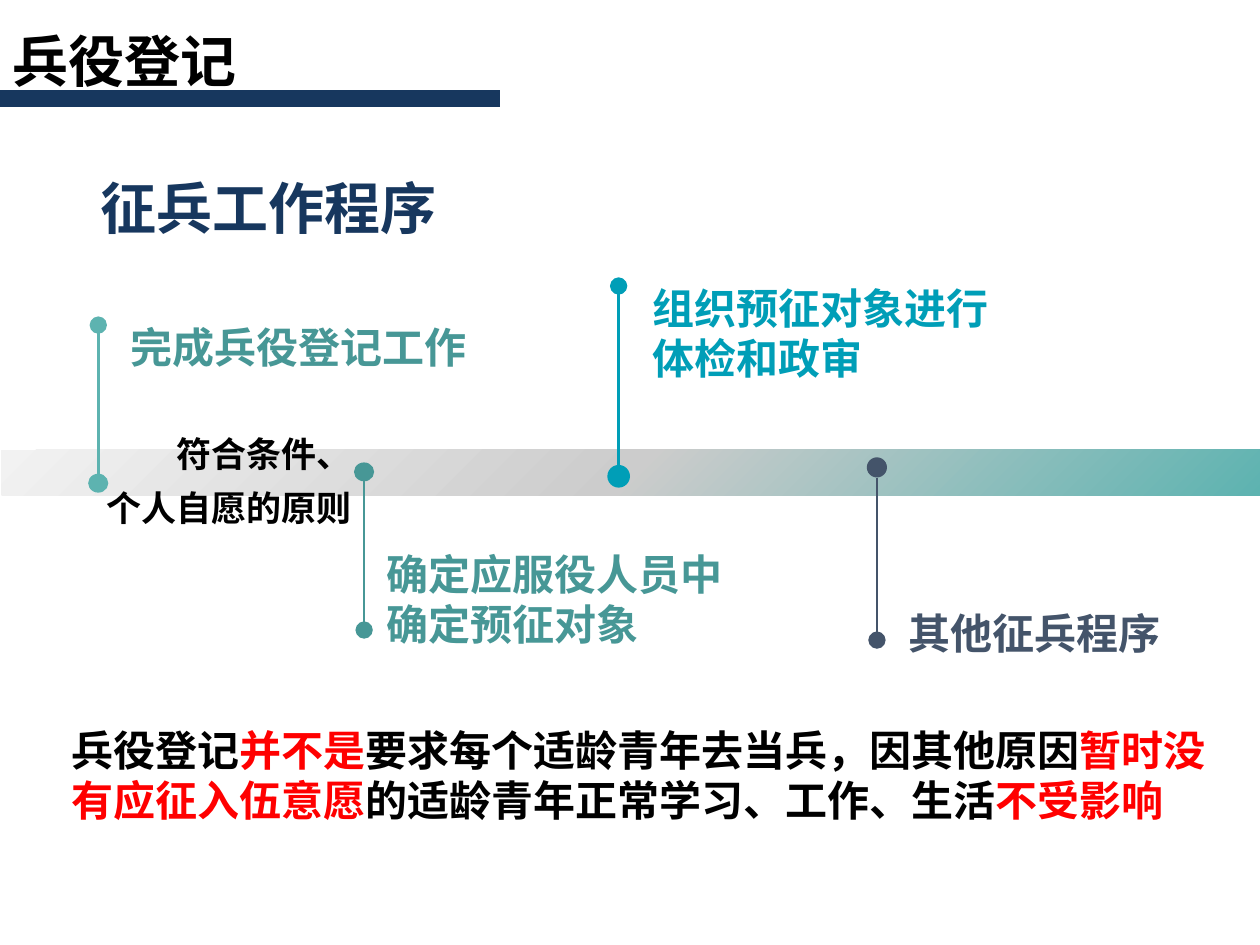
import functools
from collections import namedtuple
from dataclasses import dataclass

import pptx
import pptx.dml.color
import pptx.enum.shapes
import pptx.enum.text
import pptx.oxml
import pptx.oxml.ns
import pptx.util
from lxml import etree

COLUMNS, ROWS = 100, 75
SLIDE_WIDTH, SLIDE_HEIGHT = pptx.util.Inches(10), pptx.util.Inches(7.5)

Box = namedtuple("Box", "left top width height")
# The label box is measured from the pin's top.
Milestone = namedtuple("Milestone", "wording color pin dot_height rising label wrap")


@dataclass(frozen=True)
class Theme:
    navy: str = "17375E"
    mint: str = "5DB3B0"
    teal: str = "479796"
    cyan: str = "009EB7"
    slate: str = "44546A"
    black: str = "000000"
    red: str = "FF0000"
    silver: str = "CCCCCC"
    pale: str = "F2F2F2"
    heading_font: str = "Noto Sans CJK SC"
    text_font: str = "Quicksand"
    heading_size: int = 32
    label_size: int = 24
    note_size: int = 20
    rule_width: int = 10
    pin_width: float = 1.5


THEME = Theme()

MILESTONES = [
    Milestone("完成兵役登记工作", THEME.mint, Box(7, 25.8, 1.6, 13.3), 1.5, True,
              Box(2.4, -0.8, 28.9, 5), False),
    Milestone("确定应服役人员中确定预征对象", THEME.teal, Box(28.1, 36.7, 1.6, 13.3), 1.5, False,
              Box(1.6, 6.3, 30.7, 9.1), True),
    Milestone("组织预征对象进行体检和政审", THEME.cyan, Box(48.2, 22.7, 1.8, 16), 1.8, True,
              Box(2.6, -0.8, 31.2, 9.1), True),
    Milestone("其他征兵程序", THEME.slate, Box(68.8, 36.3, 1.6, 14.5), 1.6, False,
              Box(2.3, 11.4, 22.2, 10.4), False),
]

CLOSING = [
    ("兵役登记", THEME.black), ("并不是", THEME.red),
    ("要求每个适龄青年去当兵，因其他原因", THEME.black), ("暂时没有应征入伍意愿", THEME.red),
    ("的适龄青年正常学习、工作、生活", THEME.black), ("不受影响", THEME.red),
]


def col(count):
    return round(SLIDE_WIDTH * count / COLUMNS)


def row(count):
    return round(SLIDE_HEIGHT * count / ROWS)


def place(box):
    return col(box.left), row(box.top), col(box.width), row(box.height)


def rgb(value):
    return pptx.dml.color.RGBColor.from_string(value)


def apply(target, formats):
    for name, value in formats.items():
        setattr(target, name, value)


def write(shape, paragraphs, size, font=THEME.text_font, wrap=True, **formats):
    """Fill a shape with paragraphs, each a list of (wording, color) runs."""
    frame = shape.text_frame
    apply(frame, {"word_wrap": wrap, "vertical_anchor": pptx.enum.text.MSO_ANCHOR.TOP,
                  "auto_size": pptx.enum.text.MSO_AUTO_SIZE.SHAPE_TO_FIT_TEXT})
    for index, runs in enumerate(paragraphs):
        paragraph = frame.add_paragraph() if index else frame.paragraphs[0]
        apply(paragraph, {"alignment": pptx.enum.text.PP_ALIGN.LEFT,
                          "space_before": pptx.util.Pt(0), **formats})
        for wording, color in runs:
            run = paragraph.add_run()
            run.text = wording
            apply(run.font, {"name": font, "size": pptx.util.Pt(size), "bold": True})
            run.font.color.rgb = rgb(color)
            east_asian = etree.SubElement(run.font._element, pptx.oxml.ns.qn("a:ea"))
            east_asian.set("typeface", font)


def add_text(slide, box, *content, **formats):
    write(slide.shapes.add_textbox(*place(box)), *content, **formats)


def add_line(shapes, start, end, color, width):
    line = shapes.add_connector(pptx.enum.shapes.MSO_CONNECTOR.STRAIGHT,
                                col(start[0]), row(start[1]), col(end[0]), row(end[1]))
    line.line.color.rgb = rgb(color)
    line.line.width = pptx.util.Pt(width)
    etree.SubElement(line._element.spPr, pptx.oxml.ns.qn("a:effectLst"))
    return line


def add_header(slide, box):
    title = slide.shapes.title
    apply(title, dict(zip(Box._fields, place(box))))
    write(title, [[("兵役登记", THEME.black)]], THEME.heading_size, THEME.heading_font)
    rule = box.top + 6.2
    add_line(slide.shapes, (box.left, rule), (box.left + 39.7, rule),
             THEME.navy, THEME.rule_width)


def add_band(slide, box):
    """Timeline band, shaded outwards from its lower right corner."""
    band = slide.shapes.add_shape(pptx.enum.shapes.MSO_SHAPE.RECTANGLE, *place(box))
    band.shadow.inherit = False
    band.line.fill.background()
    stops = "".join(
        f'<a:gs pos="{share * 1000}"><a:srgbClr val="{color}"/></a:gs>'
        for share, color in [(0, THEME.mint), (50, THEME.silver), (100, THEME.pale)])
    gradient = pptx.oxml.parse_xml(
        f'<a:gradFill {pptx.oxml.ns.nsdecls("a")} rotWithShape="1"><a:gsLst>{stops}</a:gsLst>'
        '<a:path path="circle"><a:fillToRect l="100000" t="100000"/></a:path></a:gradFill>')
    geometry = band._element.spPr.find(pptx.oxml.ns.qn("a:prstGeom"))
    geometry.addnext(gradient)


def add_pin(slide, milestone):
    """Dot on the band with a line out to a round end."""
    box, height = milestone.pin, milestone.dot_height
    bottom, middle = box.top + box.height, box.left + box.width / 2
    dot_top = bottom - height if milestone.rising else box.top
    start, end = (dot_top, box.top) if milestone.rising else (dot_top + height, bottom)
    pin = slide.shapes.add_group_shape()
    dot = pin.shapes.add_shape(pptx.enum.shapes.MSO_SHAPE.OVAL,
                               *place(Box(box.left, dot_top, box.width, height)))
    dot.shadow.inherit = False
    dot.fill.solid()
    dot.fill.fore_color.rgb = rgb(milestone.color)
    dot.line.fill.background()
    line = add_line(pin.shapes, (middle, start), (middle, end),
                    milestone.color, THEME.pin_width)
    tail = etree.SubElement(line.line._get_or_add_ln(), pptx.oxml.ns.qn("a:tailEnd"))
    for name, value in {"type": "oval", "w": "lg", "len": "lg"}.items():
        tail.set(name, value)


def add_milestone(slide, milestone):
    pin, label = milestone.pin, milestone.label
    add_pin(slide, milestone)
    color = THEME.teal if milestone.color == THEME.mint else milestone.color
    add_text(slide, label._replace(left=pin.left + label.left, top=pin.top + label.top),
             [[(milestone.wording, color)]], THEME.label_size, wrap=milestone.wrap)


def add_closing(slide, box):
    body = slide.placeholders[1]
    apply(body, dict(zip(Box._fields, place(box))))
    write(body, [CLOSING], THEME.label_size)
    properties = body.text_frame.paragraphs[0]._p.get_or_add_pPr()
    for name in ("marL", "indent"):
        properties.set(name, "0")
    etree.SubElement(properties, pptx.oxml.ns.qn("a:buNone"))


def main():
    deck = pptx.Presentation()
    apply(deck, {"slide_width": SLIDE_WIDTH, "slide_height": SLIDE_HEIGHT})
    slide = deck.slides.add_slide(deck.slide_layouts[1])
    add_header(slide, Box(0, 1.6, 73.4, 6.4))
    heading = functools.partial(add_text, slide, wrap=False)
    heading(Box(7, 13.3, 28.9, 6.4), [[("征兵工作程序", THEME.navy)]], THEME.heading_size)
    add_band(slide, Box(0.1, 35.7, 100, 3.6))
    for milestone in MILESTONES:
        add_milestone(slide, milestone)
    add_text(slide, Box(6.2, 32.8, 22.7, 9.8),
             [[("符合条件、", THEME.black)], [("个人自愿的原则", THEME.black)]],
             THEME.note_size, alignment=pptx.enum.text.PP_ALIGN.RIGHT, line_spacing=1.3)
    add_closing(slide, Box(4.7, 57, 92.2, 9.1))
    deck.save("out.pptx")


if __name__ == "__main__":
    main()
